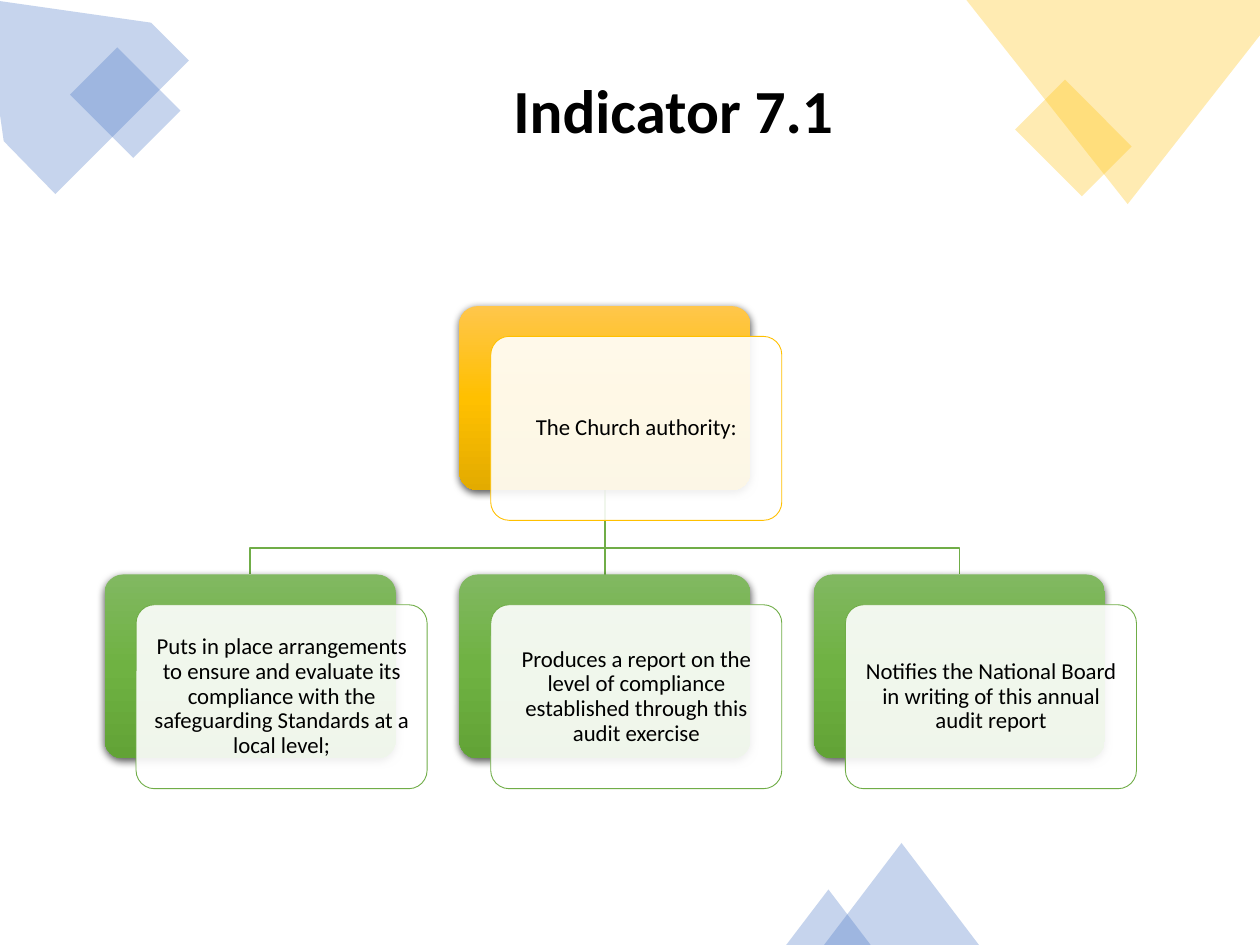
from copy import deepcopy

from lxml import etree
from pptx import Presentation
from pptx.dml.color import RGBColor
from pptx.enum import shapes as es, text as et
from pptx.oxml import parse_xml
from pptx.oxml.ns import nsdecls, qn
from pptx.util import Inches, Pt

WHITE = RGBColor(0xFF, 0xFF, 0xFF)
BLACK = RGBColor(0, 0, 0)
BLUE = RGBColor(0x44, 0x72, 0xC4)
GOLD = RGBColor(0xFF, 0xC0, 0x00)
GREEN = RGBColor(0x70, 0xAD, 0x47)
GOLD_FADE = [RGBColor(0xFF, 0xC6, 0x4B), GOLD, RGBColor(0xE3, 0xAB, 0x00)]
GREEN_FADE = [RGBColor(0x81, 0xB8, 0x61), RGBColor(0x6F, 0xB2, 0x42),
              RGBColor(0x62, 0xA3, 0x36)]
SHADOW = (f'<a:effectLst {nsdecls("a")}>'
          '<a:outerShdw blurRad="57150" dist="19050" dir="5400000" algn="ctr" rotWithShape="0">'
          '<a:srgbClr val="000000"><a:alpha val="63000"/></a:srgbClr>'
          '</a:outerShdw></a:effectLst>')

prs = Presentation()
prs.slide_width, prs.slide_height = Inches(10), Inches(7.5)
tree = prs.slides.add_slide(prs.slide_layouts[6]).shapes


def tint(shape, color, alpha):
    """Fill a shape with a see-through colour (alpha in percent), without line or shadow."""
    shape.shadow.inherit = False
    shape.fill.solid()
    shape.fill.fore_color.rgb = color
    shape.line.fill.background()
    clr = shape._element.spPr.find(qn("a:solidFill"))[0]
    if alpha < 100:
        etree.SubElement(clr, qn("a:alpha")).set("val", str(alpha * 1000))


def trace(points, close):
    """Build an outline through points given in inches."""
    pts = [(Inches(x), Inches(y)) for x, y in points]
    pen = tree.build_freeform(*pts[0], scale=1.0)
    pen.add_line_segments(pts[1:], close=close)
    return pen.convert_to_shape()


# Backdrop and corner decoration
RECT, TRI = es.MSO_SHAPE.RECTANGLE, es.MSO_SHAPE.ISOSCELES_TRIANGLE
ROUND = es.MSO_SHAPE.ROUNDED_RECTANGLE
back = tree.add_shape(RECT, 0, 0, prs.slide_width, prs.slide_height)
tint(back, WHITE, 100)

corners = [
    ([(1.2, 0.18), (-0.13, -0.01), (0.03, 1.12), (0.44, 1.54), (1.5, 0.48)], BLUE),
    ([(10, 0), (7.67, 0), (8.95, 1.62), (10, 0.28)], GOLD),
]
for points, color in corners:
    tint(trace(points, True), color, 30)

decor = [
    (RECT, (0.73, 0.46, 0.53, 0.71), 315, BLUE),
    (RECT, (8.24, 0.72, 0.56, 0.75), 315, GOLD),
    (TRI, (6.54, 6.69, 1.23, 0.81), 0, BLUE),
    (TRI, (6.24, 7.06, 0.67, 0.44), 0, BLUE),
]
for kind, box, turn, color in decor:
    shape = tree.add_shape(kind, *map(Inches, box))
    shape.rotation = turn
    tint(shape, color, 30)

# Title
title = tree.add_textbox(Inches(1.66), Inches(0.59), Inches(7.37), Inches(1.22))
title.text_frame.word_wrap = True
para = title.text_frame.paragraphs[0]
para.text = "Indicator 7.1"
para.alignment, para.line_spacing = et.PP_ALIGN.CENTER, 0.9
for name, value in {"name": "Calibri", "size": Pt(35), "bold": True}.items():
    setattr(para.font, name, value)
para.font.color.rgb = BLACK

# Chart grid
WIDE, HIGH, STEP = 2.31, 1.46, 2.815
LEFT, TOP, LOW = 0.83, 2.43, 4.56
SHIFT, BEND = (0.25, 0.24), 4.35
cols = [LEFT + i * STEP for i in range(3)]
mids = [x + WIDE / 2 for x in cols]

# Branch lines, behind the cards
stem = tree.add_connector(es.MSO_CONNECTOR.STRAIGHT, Inches(mids[1]), Inches(TOP + HIGH),
                          Inches(mids[1]), Inches(LOW))
etree.SubElement(stem._element.spPr, qn("a:effectLst"))
arms = [trace([(mids[1], TOP + HIGH), (mids[1], BEND), (x, BEND), (x, LOW)], False)
        for x in (mids[0], mids[2])]
for arm in arms:
    arm.shadow.inherit = False
    arm.fill.background()
for line in [stem, *arms]:
    line.line.color.rgb, line.line.width = GREEN, Pt(1)

# Cards: a shaded block with a white text panel shifted over it
cards = [
    (cols[1], TOP, GOLD, GOLD_FADE, "The Church authority:"),
    (cols[0], LOW, GREEN, GREEN_FADE,
     "Puts in place arrangements to ensure and evaluate its compliance with "
     "the safeguarding Standards at a local level;"),
    (cols[1], LOW, GREEN, GREEN_FADE,
     "Produces a report on the level of compliance established through this audit exercise"),
    (cols[2], LOW, GREEN, GREEN_FADE,
     "Notifies the National Board in writing of this annual audit report"),
]
blocks = []
for x, y, color, fade, words in cards:
    block, panel = [
        tree.add_shape(ROUND, Inches(x + dx), Inches(y + dy), Inches(WIDE), Inches(HIGH))
        for dx, dy in ((0, 0), SHIFT)]
    block.adjustments[0] = panel.adjustments[0] = 0.1
    blocks.append(block)

    block.line.fill.background()
    block.fill.gradient()
    block.fill.gradient_angle = 270
    stops = block._element.spPr.find(qn("a:gradFill")).find(qn("a:gsLst"))
    stops.append(deepcopy(stops[-1]))
    for stop, shade, place in zip(block.fill.gradient_stops, fade, (0, 0.5, 1)):
        stop.color.rgb, stop.position = shade, place
    block._element.spPr.append(parse_xml(SHADOW))

    tint(panel, WHITE, 90)
    panel.line.color.rgb, panel.line.width = color, Pt(0.5)
    frame = panel.text_frame
    frame.word_wrap = True
    frame.vertical_anchor = et.MSO_ANCHOR.MIDDLE
    for side in ("left", "right", "top", "bottom"):
        setattr(frame, f"margin_{side}", Inches(0.05))
    para = frame.paragraphs[0]
    para.text = words
    para.alignment, para.line_spacing = et.PP_ALIGN.CENTER, 0.9
    para.font.name, para.font.size = "Calibri", Pt(13)
    para.font.color.rgb = BLACK

stem.begin_connect(blocks[0], 2)
stem.end_connect(blocks[2], 0)

prs.save("out.pptx")
